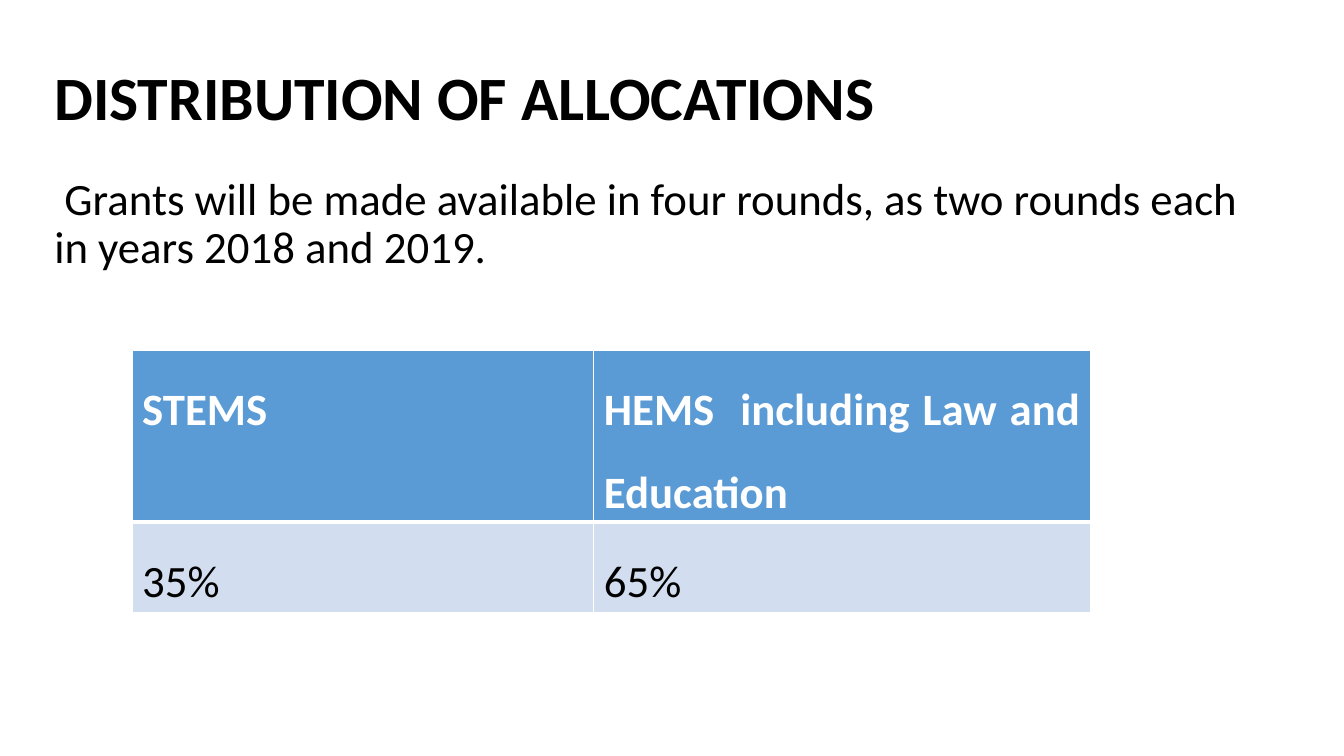
from lxml.etree import SubElement
from pptx import Presentation
from pptx.dml.color import RGBColor
from pptx.enum.text import MSO_ANCHOR as Anchor, PP_ALIGN as Align
from pptx.oxml.ns import qn
from pptx.util import Inches, Pt

BLACK = RGBColor(0x00, 0x00, 0x00)
WHITE = RGBColor(0xFF, 0xFF, 0xFF)
HEADER_BLUE = RGBColor(0x5B, 0x9B, 0xD5)
BODY_BLUE = RGBColor(0xD2, 0xDE, 0xEF)

COLUMN_WIDTHS = (4.58, 4.93)
ROW_HEIGHTS = (1.7, 0.9)
ALLOCATIONS = (
    ("STEMS", "HEMS  including Law and Education"),
    ("35%", "65%"),
)


def write_text(frame, text, size=32, color=BLACK, bold=False,
               align=Align.LEFT, line_spacing=0.9, space_before=0):
    para = frame.paragraphs[0]
    para.alignment = align
    para.line_spacing = line_spacing
    para.space_before = Pt(space_before)
    span = para.add_run()
    span.text = text
    span.font.name = "Calibri"
    span.font.size = Pt(size)
    span.font.bold = bold
    span.font.color.rgb = color


def add_text_box(page, left, top, width, height, text,
                 anchor=Anchor.TOP, **text_format):
    box = page.shapes.add_textbox(
        Inches(left), Inches(top), Inches(width), Inches(height))
    frame = box.text_frame
    frame.word_wrap = True
    frame.vertical_anchor = anchor
    write_text(frame, text, **text_format)


def set_borders(cell, **widths):
    """Draw white borders; the keywords L, R, T, B give widths in points."""
    properties = cell._tc.get_or_add_tcPr()
    for side, width in widths.items():
        line = SubElement(properties, qn(f"a:ln{side}"), w=str(Pt(width)))
        fill = SubElement(line, qn("a:solidFill"))
        SubElement(fill, qn("a:srgbClr"), val=str(WHITE))


def add_allocation_table(page, left, top):
    table = page.shapes.add_table(
        len(ROW_HEIGHTS), len(COLUMN_WIDTHS), Inches(left), Inches(top),
        Inches(sum(COLUMN_WIDTHS)), Inches(sum(ROW_HEIGHTS))).table
    for column, width in zip(table.columns, COLUMN_WIDTHS):
        column.width = Inches(width)
    for row_index, (row, height) in enumerate(zip(table.rows, ROW_HEIGHTS)):
        row.height = Inches(height)
        header = row_index == 0
        for cell, text in zip(row.cells, ALLOCATIONS[row_index]):
            set_borders(cell, L=1, R=1, T=1 if header else 3,
                        B=3 if header else 1)
            cell.fill.solid()
            cell.fill.fore_color.rgb = HEADER_BLUE if header else BODY_BLUE
            write_text(cell.text_frame, text, bold=header,
                       color=WHITE if header else BLACK,
                       align=Align.JUSTIFY, line_spacing=1.5)


def main():
    deck = Presentation()
    deck.slide_width = Inches(13.33)
    deck.slide_height = Inches(7.5)
    page = deck.slides.add_slide(deck.slide_layouts[6])
    add_text_box(page, 0.44, 0.27, 11.5, 1.45, "DISTRIBUTION OF ALLOCATIONS",
                 anchor=Anchor.MIDDLE, size=44, bold=True)
    add_text_box(page, 0.44, 1.7, 12.33, 5.03,
                 " Grants will be made available in four rounds, "
                 "as two rounds each in years 2018 and 2019.",
                 space_before=10)
    add_allocation_table(page, 1.31, 3.48)
    deck.save("out.pptx")


if __name__ == "__main__":
    main()
